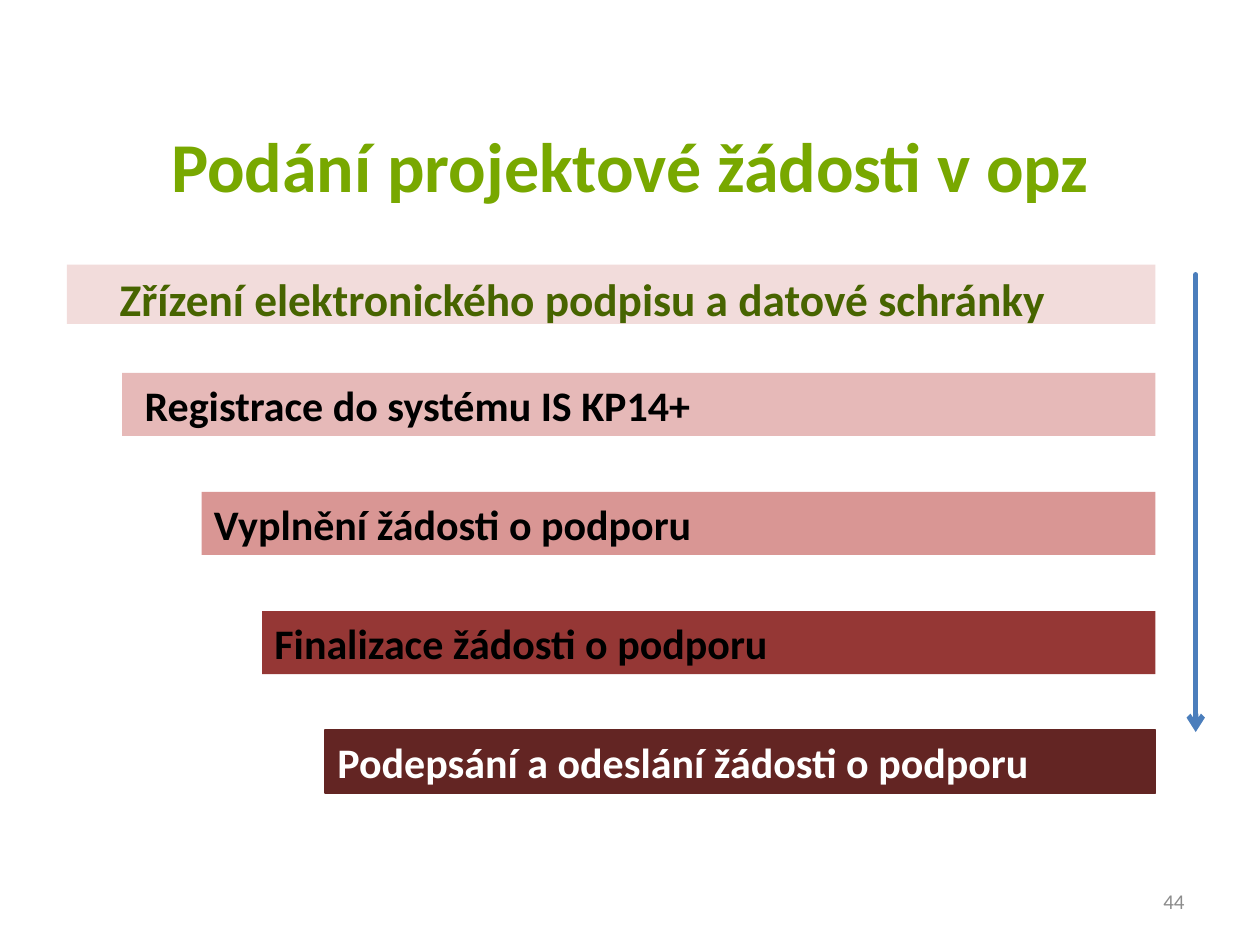
import dataclasses

import pptx
import pptx.dml.color
import pptx.enum.shapes
import pptx.enum.text
import pptx.oxml.ns
import pptx.util
from lxml import etree

Inches = pptx.util.Inches
Pt = pptx.util.Pt
RGBColor = pptx.dml.color.RGBColor
Align = pptx.enum.text.PP_ALIGN
Anchor = pptx.enum.text.MSO_ANCHOR
qn = pptx.oxml.ns.qn

TITLE_GREEN = RGBColor(0x78, 0xA8, 0x00)
DARK_GREEN = RGBColor(0x47, 0x64, 0x00)
BLACK = RGBColor(0x00, 0x00, 0x00)
WHITE = RGBColor(0xFF, 0xFF, 0xFF)
GREY = RGBColor(0x8C, 0x8C, 0x8C)
ARROW_BLUE = RGBColor(0x4B, 0x7E, 0xBC)
PALE_PINK = RGBColor(0xF2, 0xDC, 0xDB)
LIGHT_ROSE = RGBColor(0xE6, 0xB9, 0xB8)
ROSE = RGBColor(0xD9, 0x96, 0x94)
RED = RGBColor(0x95, 0x37, 0x35)
DARK_RED = RGBColor(0x63, 0x25, 0x23)

BARS_RIGHT = 9.17
BAR_HEIGHT = 0.5
FIRST_BAR_TOP = 2.96
BAR_STEP = 0.945


@dataclasses.dataclass
class Step:
    text: str
    left: float
    fill: RGBColor
    color: RGBColor = BLACK
    indent: float = 0
    outlined: bool = False


STEPS = [
    Step("Registrace do systému IS KP14+", 0.97, LIGHT_ROSE, indent=0.08),
    Step("Vyplnění žádosti o podporu", 1.6, ROSE),
    Step("Finalizace žádosti o podporu", 2.08, RED),
    Step("Podepsání a odeslání žádosti o podporu", 2.58, DARK_RED, WHITE, outlined=True),
]


def place(shape, left: float, top: float, width: float, height: float) -> None:
    shape.left, shape.top = Inches(left), Inches(top)
    shape.width, shape.height = Inches(width), Inches(height)


def write(shape, text: str, size: float, color: RGBColor, align, anchor,
          bold: bool = True, indent: float = 0) -> None:
    """Write one unbulleted paragraph into a shape."""
    frame = shape.text_frame
    frame.word_wrap = True
    frame.auto_size = pptx.enum.text.MSO_AUTO_SIZE.NONE
    frame.vertical_anchor = anchor
    paragraph = frame.paragraphs[0]
    properties = paragraph._p.get_or_add_pPr()
    properties.set("marL", str(Inches(indent)))
    properties.set("indent", "0")
    etree.SubElement(properties, qn("a:buNone"))
    paragraph.alignment = align
    paragraph.space_before = Pt(0)
    run = paragraph.add_run()
    run.text = text
    run.font.name = "Calibri"
    run.font.size = Pt(size)
    run.font.bold = bold
    run.font.color.rgb = color


def add_step(slide, step: Step, top: float) -> None:
    shape = slide.shapes.add_shape(
        pptx.enum.shapes.MSO_SHAPE.RECTANGLE, Inches(step.left), Inches(top),
        Inches(BARS_RIGHT - step.left), Inches(BAR_HEIGHT))
    shape.shadow.inherit = False
    shape.fill.solid()
    shape.fill.fore_color.rgb = step.fill
    if step.outlined:
        shape.line.color.rgb = step.fill
        shape.line.width = Pt(0.75)
    else:
        shape.line.fill.background()
    write(shape, step.text, 24, step.color, Align.LEFT, Anchor.TOP, indent=step.indent)


def add_arrow(slide, x: float, top: float, bottom: float) -> None:
    arrow = slide.shapes.add_connector(
        pptx.enum.shapes.MSO_CONNECTOR.STRAIGHT,
        Inches(x), Inches(top), Inches(x), Inches(bottom))
    arrow.line.color.rgb = ARROW_BLUE
    arrow.line.width = Pt(3)
    line = arrow.line._get_or_add_ln()
    line.set("cap", "rnd")
    etree.SubElement(line, qn("a:tailEnd"), type="arrow")
    etree.SubElement(arrow._element.spPr, qn("a:effectLst"))


def main() -> None:
    presentation = pptx.Presentation()
    presentation.slide_width, presentation.slide_height = Inches(10), Inches(7.5)
    slide = presentation.slides.add_slide(presentation.slide_layouts[1])

    # Title
    title = slide.shapes.title
    place(title, 0.5, 0.68, 9, 1.25)
    write(title, "Podání projektové žádosti v opz", 40, TITLE_GREEN, Align.CENTER, Anchor.MIDDLE)

    # First step, in the body placeholder
    body = slide.placeholders[1]
    place(body, 0.53, 2.1, 8.64, 0.47)
    body.fill.solid()
    body.fill.fore_color.rgb = PALE_PINK
    write(body, "Zřízení elektronického podpisu a datové schránky", 25.9, DARK_GREEN,
          Align.LEFT, Anchor.TOP, indent=0.32)

    # Slide number
    number = slide.shapes.add_textbox(Inches(7.17), Inches(6.95), Inches(2.33), Inches(0.4))
    write(number, "44", 12, GREY, Align.RIGHT, Anchor.MIDDLE, bold=False)

    # Following steps and the arrow beside them
    for index, step in enumerate(STEPS):
        add_step(slide, step, FIRST_BAR_TOP + index * BAR_STEP)
    add_arrow(slide, 9.49, 2.18, 5.81)

    presentation.save("out.pptx")


if __name__ == "__main__":
    main()
